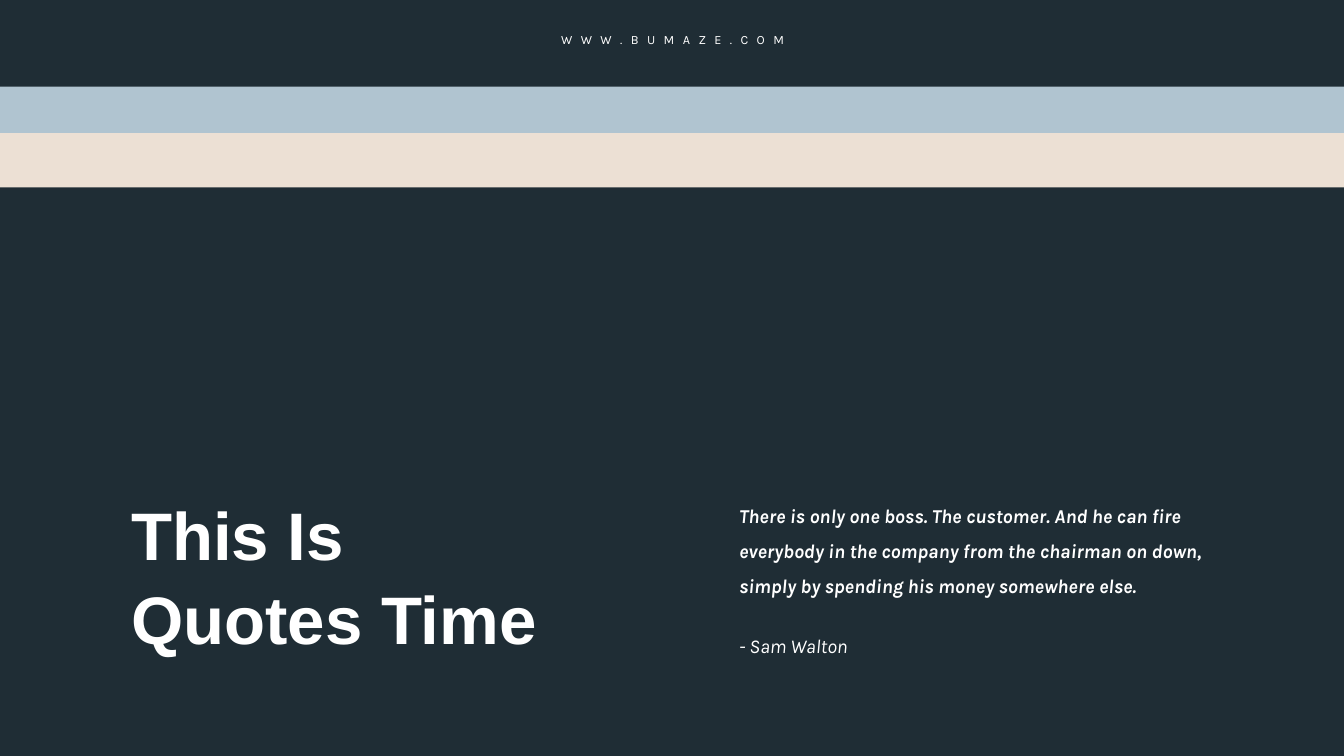
import pptx
import pptx.dml.color
import pptx.enum.shapes
import pptx.enum.text
import pptx.util

Inches = pptx.util.Inches
ALIGN = pptx.enum.text.PP_ALIGN
ANCHOR = pptx.enum.text.MSO_ANCHOR
SLIDE_WIDTH = 13.33
NAVY, BLUE, SAND, WHITE = "1F2D35", "B0C4D0", "ECE0D4", "FFFFFF"


def set_fill(fill, color):
    fill.solid()
    fill.fore_color.rgb = pptx.dml.color.RGBColor.from_string(color)


def place(shape, left, top, width, height):
    shape.left, shape.top = Inches(left), Inches(top)
    shape.width, shape.height = Inches(width), Inches(height)


def add_band(slide, top, height, color):
    """Add a stripe across the full slide width."""
    band = slide.shapes.add_shape(
        pptx.enum.shapes.MSO_SHAPE.RECTANGLE,
        Inches(0), Inches(top), Inches(SLIDE_WIDTH), Inches(height))
    band.shadow.inherit = False
    set_fill(band.fill, color)
    band.line.fill.background()


def write_text(shape, text, size, font="Karla", bold=False, italic=False,
               align=ALIGN.LEFT, anchor=ANCHOR.TOP, line_spacing=1.0, tracking=0):
    """Fill a shape with one formatted paragraph; tracking is in points."""
    frame = shape.text_frame
    frame.word_wrap = True
    frame.auto_size = pptx.enum.text.MSO_AUTO_SIZE.SHAPE_TO_FIT_TEXT
    frame.vertical_anchor = anchor
    frame.margin_left = frame.margin_right = 0
    frame.margin_top = frame.margin_bottom = 0
    paragraph = frame.paragraphs[0]
    paragraph.alignment = align
    paragraph.line_spacing = line_spacing
    run = paragraph.add_run()
    run.text = text
    run.font.name = font
    run.font.size = pptx.util.Pt(size)
    run.font.bold, run.font.italic = bold, italic
    set_fill(run.font.fill, WHITE)
    if tracking:
        run._r.get_or_add_rPr().set("spc", str(tracking * 100))


def add_text(slide, box, text, **text_format):
    write_text(slide.shapes.add_textbox(*map(Inches, box)), text, **text_format)


def main():
    deck = pptx.Presentation()
    deck.slide_width, deck.slide_height = Inches(SLIDE_WIDTH), Inches(7.5)
    slide = deck.slides.add_slide(deck.slide_layouts.get_by_name("Title Only"))
    set_fill(slide.background.fill, NAVY)

    add_band(slide, 0.86, 0.46, BLUE)
    add_band(slide, 1.32, 0.54, SAND)

    title = slide.shapes.title
    place(title, 1.3, 4.88, 4.08, 1.62)
    write_text(title, "This Is Quotes Time", size=48, font="Arial", bold=True,
               anchor=ANCHOR.MIDDLE, line_spacing=1.05)

    add_text(slide, (7.33, 4.88, 4.7, 1.06),
             "There is only one boss. The customer. And he can fire everybody "
             "in the company from the chairman on down, simply by spending his "
             "money somewhere else.",
             size=14, bold=True, italic=True, line_spacing=1.5)
    add_text(slide, (7.33, 6.17, 4.74, 0.32), "- Sam Walton",
             size=14, italic=True, line_spacing=1.5)
    add_text(slide, (5.27, 0.32, 2.8, 0.15), "WWW.BUMAZE.COM",
             size=9, align=ALIGN.CENTER, tracking=6)

    deck.save("out.pptx")


if __name__ == "__main__":
    main()
